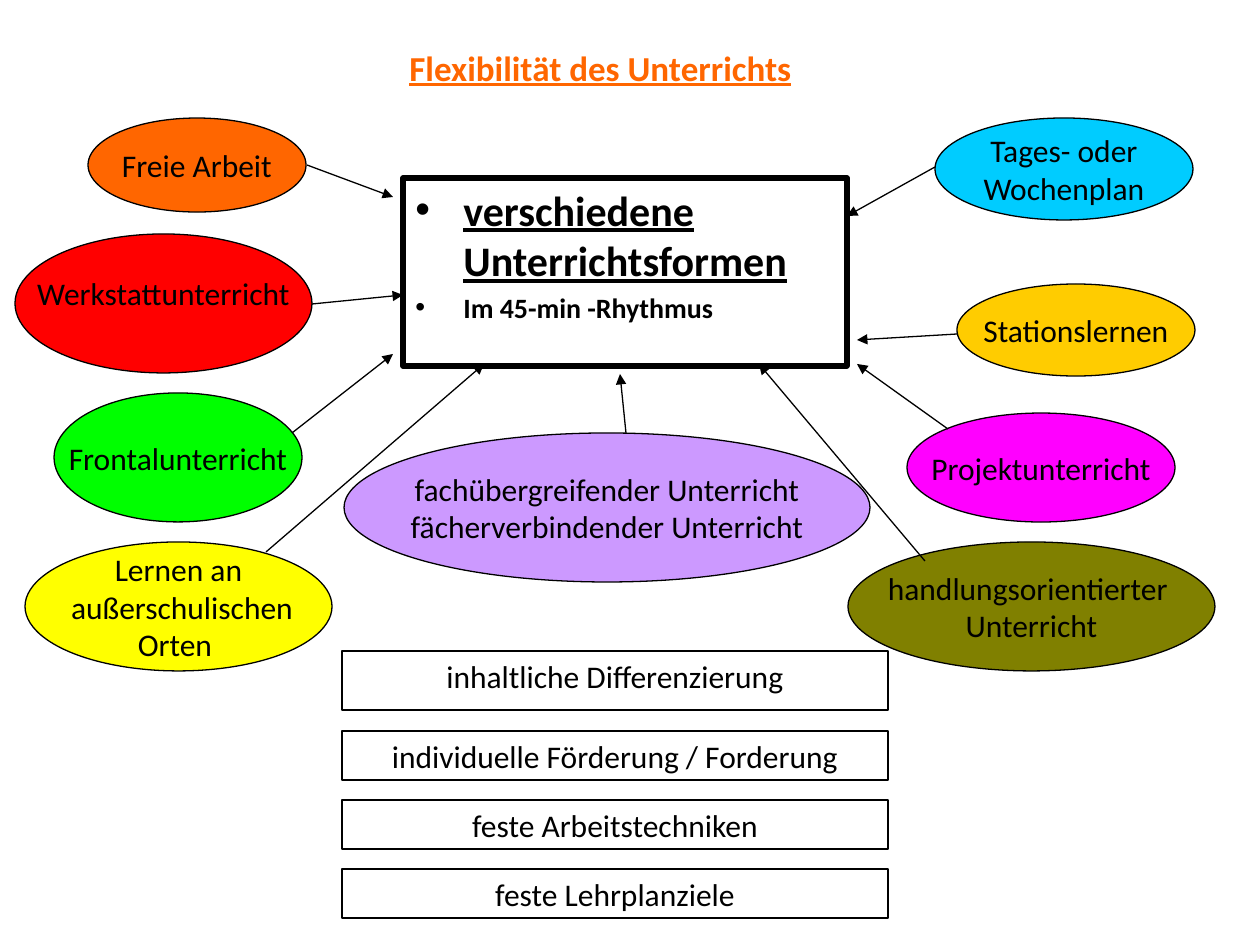
from dataclasses import dataclass

import lxml.etree
import pptx
import pptx.dml.color
import pptx.enum.shapes
import pptx.enum.text
import pptx.oxml.ns
import pptx.util

SHAPE = pptx.enum.shapes.MSO_SHAPE
ANCHOR = pptx.enum.text.MSO_ANCHOR
ALIGN = pptx.enum.text.PP_ALIGN
qn = pptx.oxml.ns.qn


def px(length):
    return pptx.util.Emu(length * 914400 // 126)


def rgb(value):
    return pptx.dml.color.RGBColor.from_string(value)


@dataclass(frozen=True)
class Theme:
    font: str = "Calibri"
    ink: str = "000000"
    paper: str = "FFFFFF"
    orange: str = "FF6600"
    red: str = "FF0000"
    green: str = "00FF00"
    yellow: str = "FFFF00"
    cyan: str = "00CCFF"
    gold: str = "FFCC00"
    magenta: str = "FF00FF"
    olive: str = "808000"
    lilac: str = "CC99FF"
    title_size: int = 20
    core_size: int = 24
    detail_size: int = 16
    body_size: int = 18
    thin: float = 0.75
    thick: float = 3


def write(paragraph, words, *, font, size, color, bold=False, underline=False,
          align=ALIGN.CENTER, before=0, bullet_indent=0):
    paragraph.alignment = align
    if before:
        paragraph.space_before = pptx.util.Pt(before)
    if bullet_indent:
        properties = paragraph._p.get_or_add_pPr()
        properties.set("marL", str(px(bullet_indent)))
        properties.set("indent", str(-px(bullet_indent)))
        lxml.etree.SubElement(properties, qn("a:buFont"), typeface="Arial")
        lxml.etree.SubElement(properties, qn("a:buChar"), char="•")
    run = paragraph.add_run()
    run.text = words
    run.font.name = font
    run.font.size = pptx.util.Pt(size)
    run.font.bold = bold
    run.font.underline = underline
    run.font.color.rgb = rgb(color)


class Board:
    def __init__(self, slide, theme):
        self.slide = slide
        self.theme = theme

    def outline(self, preset, area, lines, *, fill=None, border=None, width=None,
                anchor=ANCHOR.TOP, wrap=True, lift=0):
        theme = self.theme
        figure = self.slide.shapes.add_shape(preset, *map(px, area))
        figure.shadow.inherit = False
        if fill:
            figure.fill.solid()
            figure.fill.fore_color.rgb = rgb(fill)
        else:
            figure.fill.background()
        figure.line.color.rgb = rgb(border or theme.ink)
        figure.line.width = pptx.util.Pt(width or theme.thin)
        frame = figure.text_frame
        frame.word_wrap = wrap
        frame.vertical_anchor = anchor
        if lift:
            frame.margin_bottom += px(lift)
        for index, (words, style) in enumerate(lines):
            paragraph = frame.add_paragraph() if index else frame.paragraphs[0]
            look = dict(font=theme.font, size=theme.body_size, color=theme.ink)
            write(paragraph, words, **(look | style))

    def title(self, area, words):
        theme = self.theme
        style = dict(size=theme.title_size, color=theme.orange, bold=True, underline=True)
        self.outline(SHAPE.RECTANGLE, area, [(words, style)], border=theme.paper)

    def core(self, area, headline, detail):
        theme = self.theme
        bullet = dict(bold=True, align=ALIGN.LEFT, bullet_indent=48)
        self.outline(SHAPE.RECTANGLE, area, [
            (headline, bullet | dict(size=theme.core_size, underline=True)),
            (detail, bullet | dict(size=theme.detail_size, before=3)),
        ], width=theme.thick)

    def method(self, area, color, lines, lift=0):
        self.outline(SHAPE.OVAL, area, [(words, {}) for words in lines], fill=color,
                     anchor=ANCHOR.MIDDLE, wrap=False, lift=lift)

    def principle(self, area, words, anchor=ANCHOR.TOP):
        self.outline(SHAPE.RECTANGLE, area, [(words, {})], anchor=anchor)

    def arrow(self, start, end):
        link = self.slide.shapes.add_connector(
            pptx.enum.shapes.MSO_CONNECTOR.STRAIGHT, *map(px, start + end))
        link.line.color.rgb = rgb(self.theme.ink)
        link.line.width = pptx.util.Pt(self.theme.thin)
        lxml.etree.SubElement(link.line._get_or_add_ln(), qn("a:tailEnd"), type="triangle")
        lxml.etree.SubElement(link._element.spPr, qn("a:effectLst"))


def main():
    deck = pptx.Presentation()
    deck.slide_width = px(1260)
    deck.slide_height = px(945)
    theme = Theme()
    board = Board(deck.slides.add_slide(deck.slide_layouts[6]), theme)

    board.title((154, 40, 893, 47), "Flexibilität des Unterrichts")
    board.core((403, 178, 444, 188), "verschiedene Unterrichtsformen", "Im 45-min -Rhythmus")

    methods = [
        ((848, 542, 367, 129), theme.olive, ["handlungsorientierter ", "Unterricht"]),
        ((54, 393, 248, 129), theme.green, ["Frontalunterricht"]),
        ((25, 542, 307, 129), theme.yellow, ["Lernen an", " außerschulischen", "Orten "]),
        ((907, 413, 268, 109), theme.magenta, ["Projektunterricht"]),
        ((935, 118, 258, 102), theme.cyan, ["Tages- oder", "Wochenplan"]),
        ((88, 118, 218, 94), theme.orange, ["Freie Arbeit"]),
        ((957, 284, 238, 92), theme.gold, ["Stationslernen"]),
        ((344, 433, 526, 149), theme.lilac,
         ["fachübergreifender Unterricht", "fächerverbindender Unterricht"]),
    ]
    for area, color, lines in methods:
        board.method(area, color, lines)

    principles = [
        (651, 59, "inhaltliche Differenzierung", ANCHOR.TOP),
        (731, 49, "individuelle Förderung / Forderung", ANCHOR.TOP),
        (800, 49, "feste Arbeitstechniken", ANCHOR.TOP),
        (869, 49, "feste Lehrplanziele", ANCHOR.MIDDLE),
    ]
    for top, height, words, anchor in principles:
        board.principle((342, top, 546, height), words, anchor)

    board.method((15, 234, 297, 139), theme.red, ["Werkstattunterricht"], lift=21)

    arrows = [
        ((935, 167), (847, 216)),
        ((957, 334), (857, 340)),
        ((925, 561), (759, 364)),
        ((626, 433), (620, 374)),
        ((266, 552), (484, 364)),
        ((292, 433), (393, 354)),
        ((312, 304), (403, 295)),
        ((307, 165), (393, 197)),
        ((948, 429), (857, 364)),
    ]
    for start, end in arrows:
        board.arrow(start, end)

    deck.save("out.pptx")


if __name__ == "__main__":
    main()
